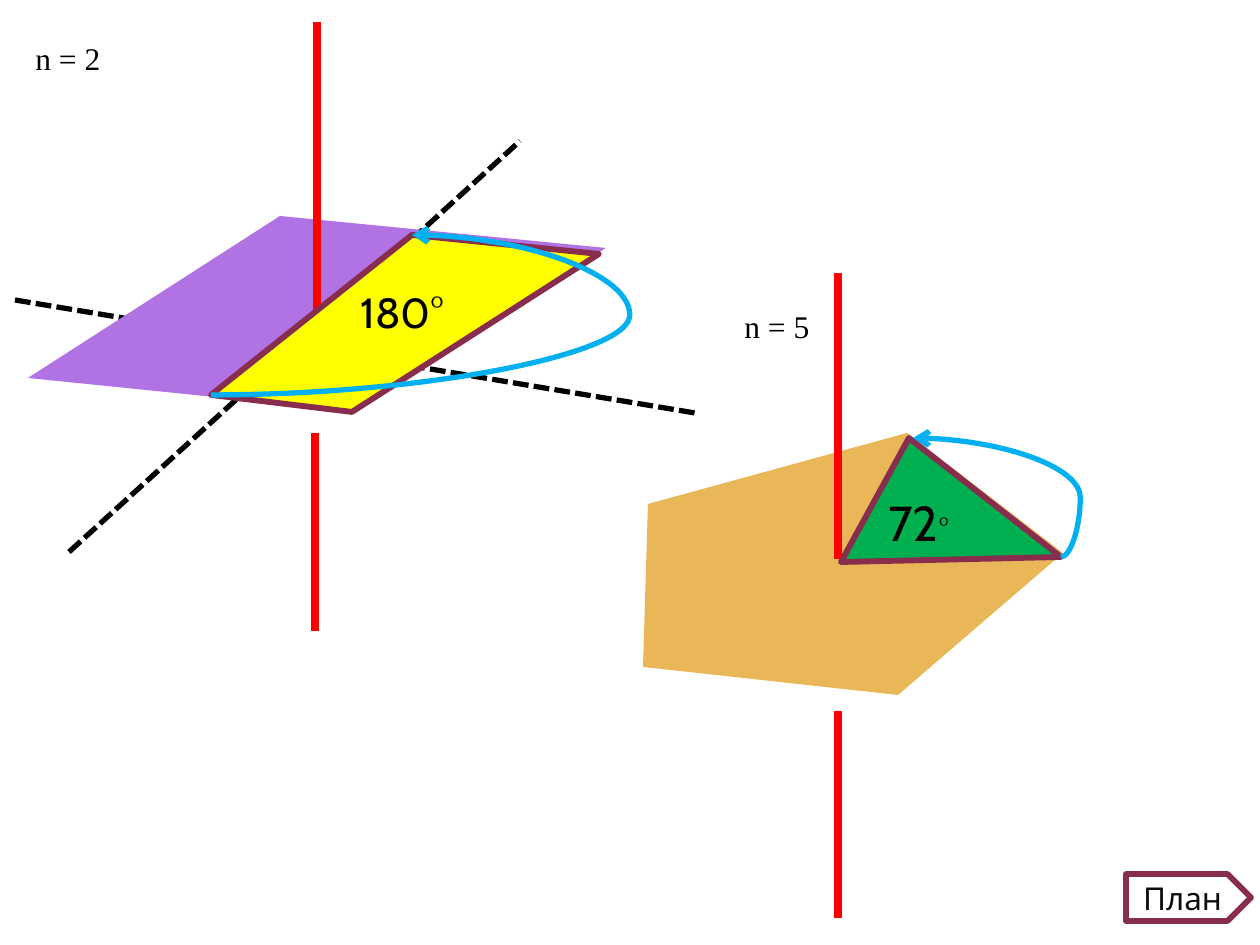
from lxml.etree import SubElement
from pptx import Presentation
from pptx.dml.color import RGBColor
from pptx.enum.dml import MSO_LINE
from pptx.enum.shapes import MSO_CONNECTOR as CONNECTOR, MSO_SHAPE as SHAPE
from pptx.enum.text import MSO_ANCHOR, MSO_AUTO_SIZE, PP_ALIGN
from pptx.oxml.ns import qn
from pptx.util import Emu, Pt

PX = 914400 / 126
SERIF, SANS = "Times New Roman", "Cabin"
BLACK, RED, BLUE, MAROON = "000000", "FF0000", "00B0F0", "882D4D"

HORIZONTAL_AXES = [(15, 300, 695, 413), (69, 552, 520, 141)]
FIGURES = [
    {
        "base": ([(28, 378), (280, 216), (606, 248), (352, 411)], "B172E4"),
        "axis": [(317, 312, 317, 22), (315, 631, 315, 433)],
        "part": ([(412, 235), (211, 395), (352, 412), (599, 254)], "FFFF00"),
        "turn": ((211, 395, 412, 235), 208400),
        "name": ((23, 33, 91, 50), [("n = 2", 18)]),
        "angle": ((348, 280, 115, 63), [("180°", 24)]),
    },
    {
        "base": ([(648, 504), (907, 433), (1063, 553), (898, 695), (643, 667)], "E9B757"),
        "axis": [(838, 559, 838, 273), (838, 918, 838, 711)],
        "part": ([(841, 562), (1061, 557), (909, 438)], "00B050"),
        "turn": ((1061, 557, 913, 438), -13100),
        "name": ((732, 301, 91, 50), [("n = 5", 18)]),
        "angle": ((876, 486, 96, 72), [("72", 28), ("°", 18)]),
    },
]
PLAN_BUTTON = ((1126, 874, 125, 47), [("План", 18)])


def color(value):
    return RGBColor.from_string(value)


def px(values):
    return [Emu(round(value * PX)) for value in values]


def add_line(slide, ends, line_color, width, kind=CONNECTOR.STRAIGHT):
    line = slide.shapes.add_connector(kind, *px(ends))
    line.line.color.rgb = color(line_color)
    line.line.width = Pt(width)
    SubElement(line._element.spPr, qn("a:effectLst"))
    return line


def add_turn(slide, ends, bend):
    arrow = add_line(slide, ends, BLUE, 3, CONNECTOR.CURVE)
    SubElement(arrow.line._get_or_add_ln(), qn("a:tailEnd"), type="arrow")
    guides = arrow._element.spPr.find(qn("a:prstGeom")).get_or_add_avLst()
    SubElement(guides, qn("a:gd"), name="adj1", fmla=f"val {bend}")


def paint(shape, fill, outlined):
    shape.shadow.inherit = False
    shape.fill.solid()
    shape.fill.fore_color.rgb = color(fill)
    if outlined:
        shape.line.color.rgb = color(MAROON)
        shape.line.width = Pt(3.35)
    else:
        shape.line.fill.background()


def add_polygon(slide, points, fill, outlined):
    builder = slide.shapes.build_freeform(*points[0], scale=PX)
    builder.add_line_segments(points[1:], close=True)
    paint(builder.convert_to_shape(), fill, outlined)


def write(paragraph, runs, font, text_color=BLACK):
    for text, size in runs:
        run = paragraph.add_run()
        run.text = text
        run.font.name = font
        run.font.size = Pt(size)
        run.font.color.rgb = color(text_color)


def add_label(slide, box, runs, font):
    frame = slide.shapes.add_textbox(*px(box)).text_frame
    frame.word_wrap = False
    frame.auto_size = MSO_AUTO_SIZE.SHAPE_TO_FIT_TEXT
    write(frame.paragraphs[0], runs, font)


def add_figure(slide, figure):
    add_polygon(slide, *figure["base"], outlined=False)
    for ends in figure["axis"]:
        add_line(slide, ends, RED, 4.5)
    add_label(slide, *figure["name"], SERIF)
    add_polygon(slide, *figure["part"], outlined=True)
    add_turn(slide, *figure["turn"])
    add_label(slide, *figure["angle"], SANS)


def add_button(slide, box, runs):
    button = slide.shapes.add_shape(SHAPE.PENTAGON, *px(box))
    paint(button, "FFFFFF", outlined=True)
    frame = button.text_frame
    frame.vertical_anchor = MSO_ANCHOR.MIDDLE
    frame.paragraphs[0].alignment = PP_ALIGN.CENTER
    write(frame.paragraphs[0], runs, SANS, "0D0D0D")


def main():
    """Build the slide on rotation axes of order 2 and 5."""
    presentation = Presentation()
    presentation.slide_width, presentation.slide_height = px((1260, 945))
    slide = presentation.slides.add_slide(presentation.slide_layouts[6])
    for ends in HORIZONTAL_AXES:
        axis = add_line(slide, ends, BLACK, 3)
        axis.line.dash_style = MSO_LINE.SQUARE_DOT
    for figure in FIGURES:
        add_figure(slide, figure)
    add_button(slide, *PLAN_BUTTON)
    presentation.save("out.pptx")


if __name__ == "__main__":
    main()
